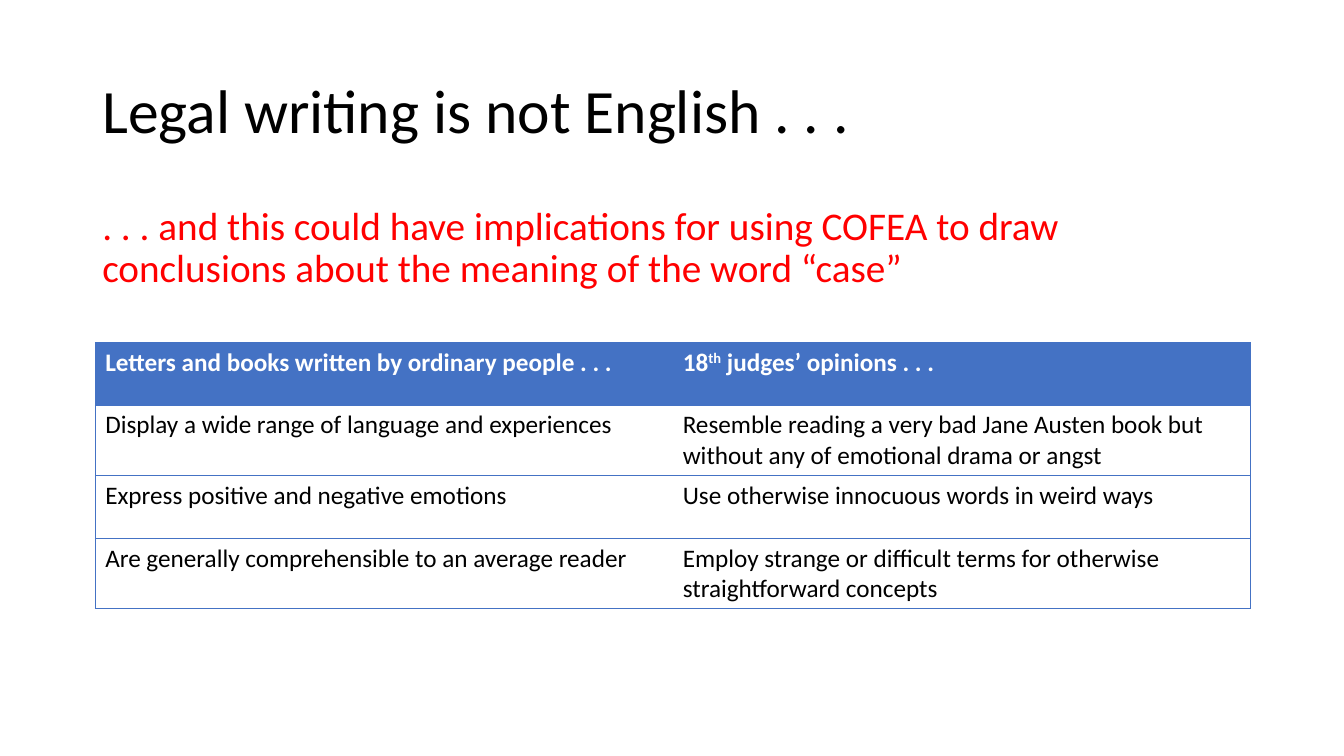
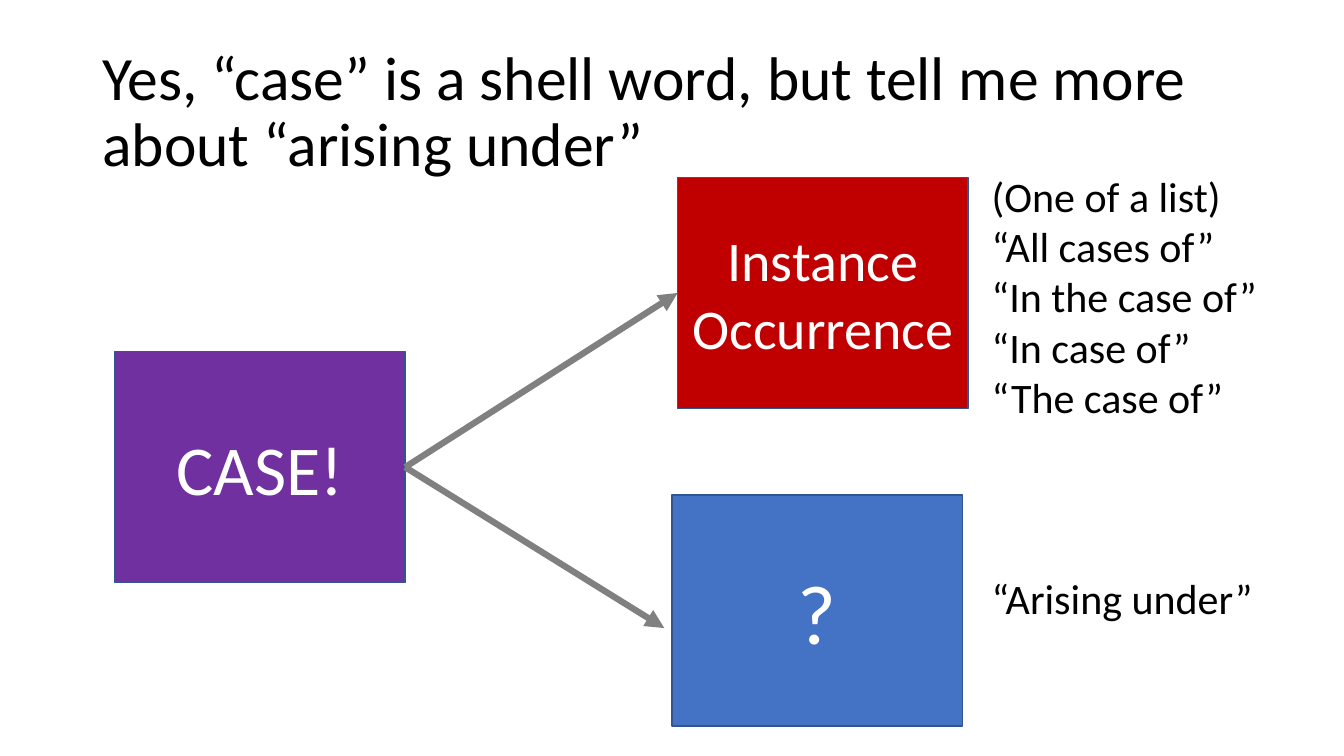
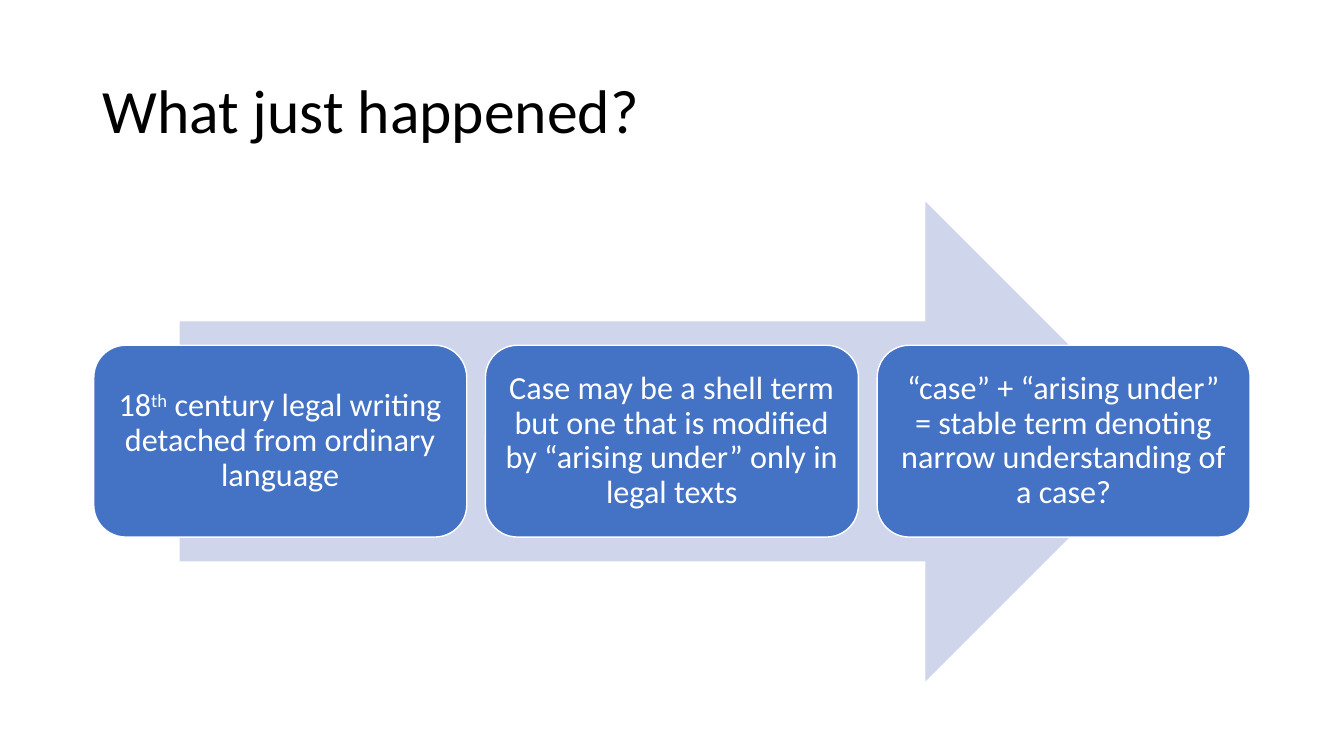
import lxml.etree
import pptx
import pptx.dml.color
import pptx.enum.shapes
import pptx.enum.text
import pptx.oxml.ns
import pptx.util

Pt = pptx.util.Pt
SHAPE = pptx.enum.shapes.MSO_SHAPE
ALIGN = pptx.enum.text.PP_ALIGN
ANCHOR = pptx.enum.text.MSO_ANCHOR

FONT = "Calibri"
COLORS = {
    "black": "000000",
    "white": "FFFFFF",
    "red": "FF0000",
    "blue": "4472C4",
    "pale blue": "CFD5EA",
    "outline": "325491",
    "purple": "7030A0",
    "dark red": "C00000",
    "gray": "808080",
}
TITLES = [
    "Legal writing is not English . . .",
    "Yes, “case” is a shell word, but tell me more about “arising under”",
    "What just happened?",
]


def color(name):
    return pptx.dml.color.RGBColor.from_string(COLORS[name])


def write_text(text_frame, text, size, color_name="black", bold=False,
               align=ALIGN.LEFT, anchor=ANCHOR.TOP, line_spacing=1.0):
    """Fill a text frame: newlines part paragraphs, ^carets^ enclose superscript."""
    text_frame.word_wrap = True
    text_frame.vertical_anchor = anchor
    for index, line in enumerate(text.split("\n")):
        paragraph = text_frame.paragraphs[0] if index == 0 else text_frame.add_paragraph()
        paragraph.alignment = align
        paragraph.line_spacing = line_spacing
        for position, part in enumerate(line.split("^")):
            run = paragraph.add_run()
            run.text = part
            run.font.name = FONT
            run.font.size = Pt(size)
            run.font.bold = bold
            run.font.color.rgb = color(color_name)
            if position % 2:
                run.font._element.set("baseline", "30000")


def add_block(slide, preset, left, top, width, height, fill, line=None):
    shape = slide.shapes.add_shape(preset, Pt(left), Pt(top), Pt(width), Pt(height))
    shape.shadow.inherit = False
    shape.fill.solid()
    shape.fill.fore_color.rgb = color(fill)
    if line:
        shape.line.color.rgb = color(line)
        shape.line.width = Pt(1)
    else:
        shape.line.fill.background()
    return shape


presentation = pptx.Presentation()
presentation.slide_width = Pt(960)
presentation.slide_height = Pt(540)

slides = []
for title in TITLES:
    slide = presentation.slides.add_slide(presentation.slide_layouts[6])
    title_box = slide.shapes.add_textbox(Pt(66), Pt(28.75), Pt(828), Pt(104.4))
    write_text(title_box.text_frame, title, 44, anchor=ANCHOR.MIDDLE, line_spacing=0.9)
    slides.append(slide)
comparison_slide, shell_word_slide, summary_slide = slides

# Comparison table
subtitle_box = comparison_slide.shapes.add_textbox(Pt(66), Pt(144), Pt(828), Pt(73.4))
write_text(
    subtitle_box.text_frame,
    ". . . and this could have implications for using COFEA to draw "
    "conclusions about the meaning of the word “case”",
    28, color_name="red", line_spacing=0.9)

rows = [
    ("Letters and books written by ordinary people . . .",
     "18^th^ judges’ opinions . . ."),
    ("Display a wide range of language and experiences",
     "Resemble reading a very bad Jane Austen book but without any of emotional drama or angst"),
    ("Express positive and negative emotions",
     "Use otherwise innocuous words in weird ways"),
    ("Are generally comprehensible to an average reader",
     "Employ strange or difficult terms for otherwise straightforward concepts"),
]
row_height = 44.64
table = comparison_slide.shapes.add_table(
    len(rows), 2, Pt(68), Pt(244.6), Pt(825), Pt(row_height * len(rows))).table
for row_index, texts in enumerate(rows):
    table.rows[row_index].height = Pt(row_height)
    is_header = row_index == 0
    for column_index, text in enumerate(texts):
        cell = table.cell(row_index, column_index)
        write_text(cell.text_frame, text, 18, bold=is_header,
                   color_name="white" if is_header else "black")
        properties = cell._tc.get_or_add_tcPr()
        inner_side = "lnR" if column_index == 0 else "lnL"
        for side in ("lnL", "lnR", "lnT", "lnB"):
            border = lxml.etree.SubElement(
                properties, pptx.oxml.ns.qn("a:" + side), w=str(Pt(0.5)))
            if side == inner_side:
                lxml.etree.SubElement(border, pptx.oxml.ns.qn("a:noFill"))
            else:
                fill = lxml.etree.SubElement(border, pptx.oxml.ns.qn("a:solidFill"))
                lxml.etree.SubElement(fill, pptx.oxml.ns.qn("a:srgbClr"), val=COLORS["blue"])
        cell.fill.solid()
        cell.fill.fore_color.rgb = color("blue" if is_header else "white")

# Meanings of "case"
box_width, box_height = 207.4, 165
case_left, case_top = 82, 251.2
instance_left, instance_top = 484, 126.8
boxes = [
    ("CASE!", case_left, case_top, "purple", 50),
    ("Instance\nOccurrence", instance_left, instance_top, "dark red", 40),
    ("?", 480, 353.5, "blue", 60),
]
for text, left, top, fill, size in boxes:
    box = add_block(shell_word_slide, SHAPE.RECTANGLE, left, top, box_width, box_height,
                    fill, line="outline")
    write_text(box.text_frame, text, size, color_name="white",
               align=ALIGN.CENTER, anchor=ANCHOR.MIDDLE)

arrow_ends = [(instance_left, instance_top + box_height / 2), (474.5, 448.6)]
for end_x, end_y in arrow_ends:
    arrow = shell_word_slide.shapes.add_connector(
        pptx.enum.shapes.MSO_CONNECTOR.STRAIGHT,
        Pt(case_left + box_width), Pt(case_top + box_height / 2), Pt(end_x), Pt(end_y))
    arrow.line.color.rgb = color("gray")
    arrow.line.width = Pt(4.5)
    lxml.etree.SubElement(
        arrow.line._get_or_add_ln(), pptx.oxml.ns.qn("a:tailEnd"), type="triangle")
    lxml.etree.SubElement(arrow._element.spPr, pptx.oxml.ns.qn("a:effectLst"))

phrases = [
    ("(One of a list)\n“All cases of”\n“In the case of”\n“In case of”\n“The case of”", 118, 189.4),
    ("“Arising under”", 405.4, 44),
]
for text, top, height in phrases:
    phrase_box = shell_word_slide.shapes.add_textbox(Pt(701.3), Pt(top), Pt(214), Pt(height))
    write_text(phrase_box.text_frame, text, 30)

# Steps along an arrow
add_block(summary_slide, SHAPE.RIGHT_ARROW, 128.4, 144, 704, 342.7, "pale blue")
steps = [
    "18^th^ century legal writing detached from ordinary language",
    "Case may be a shell term but one that is modified by “arising under” only in legal texts",
    "“case” + “arising under” = stable term denoting narrow understanding of a case?",
]
step_width, step_gap = 266.4, 13.4
for index, text in enumerate(steps):
    step = add_block(summary_slide, SHAPE.ROUNDED_RECTANGLE,
                     67 + index * (step_width + step_gap), 246.6, step_width, 137,
                     "blue", line="white")
    write_text(step.text_frame, text, 23, color_name="white", align=ALIGN.CENTER,
               anchor=ANCHOR.MIDDLE, line_spacing=0.9)

presentation.save("out.pptx")
